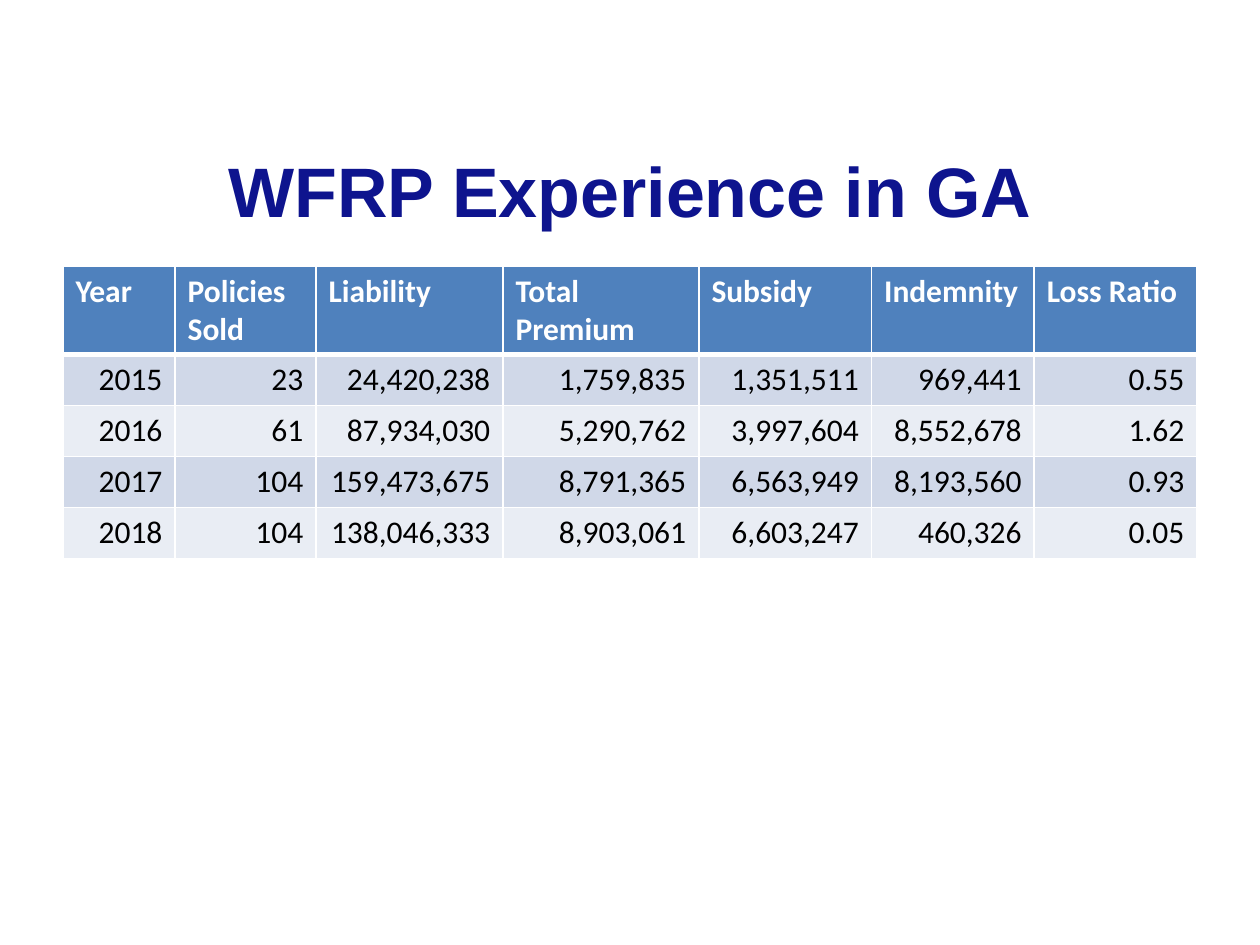
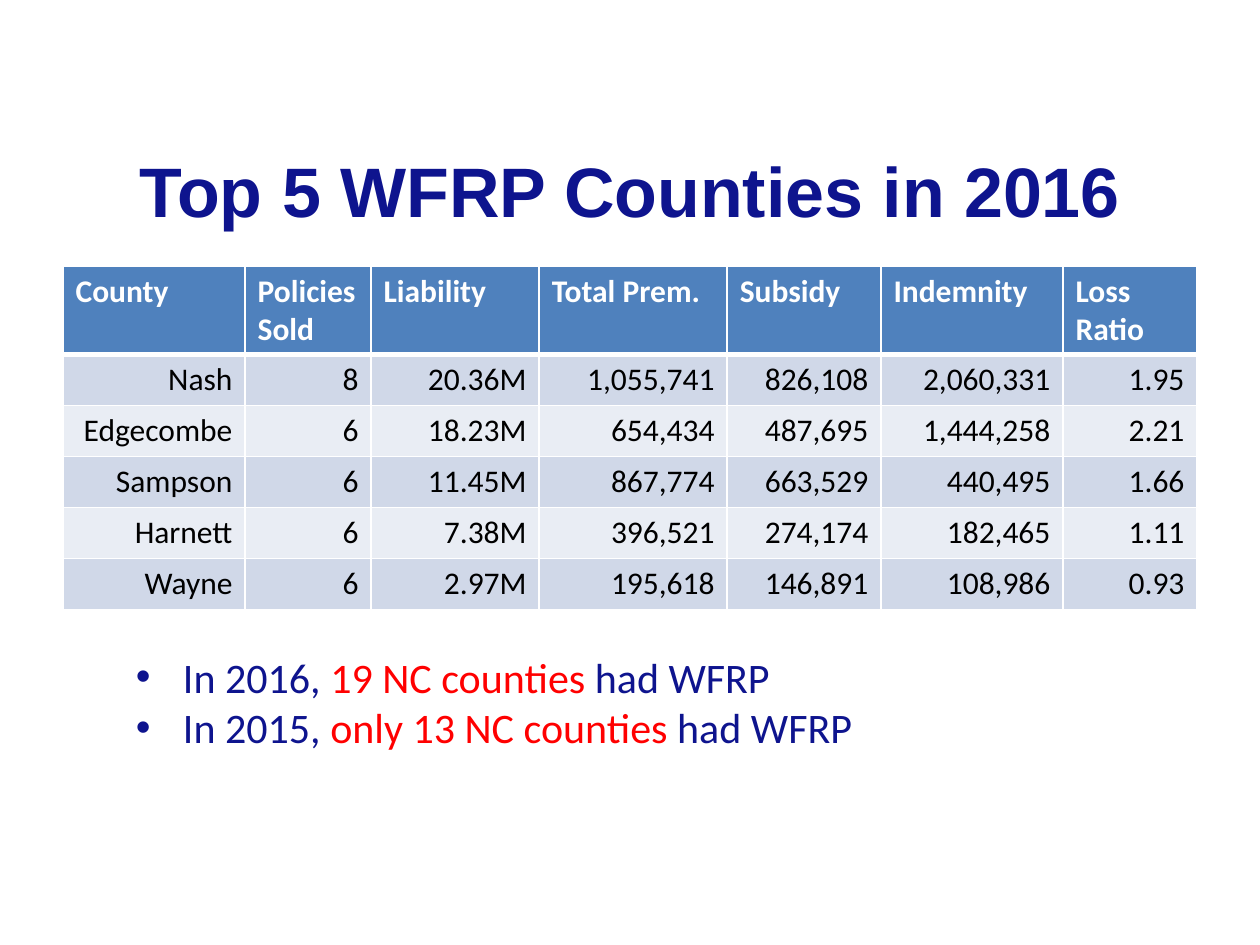
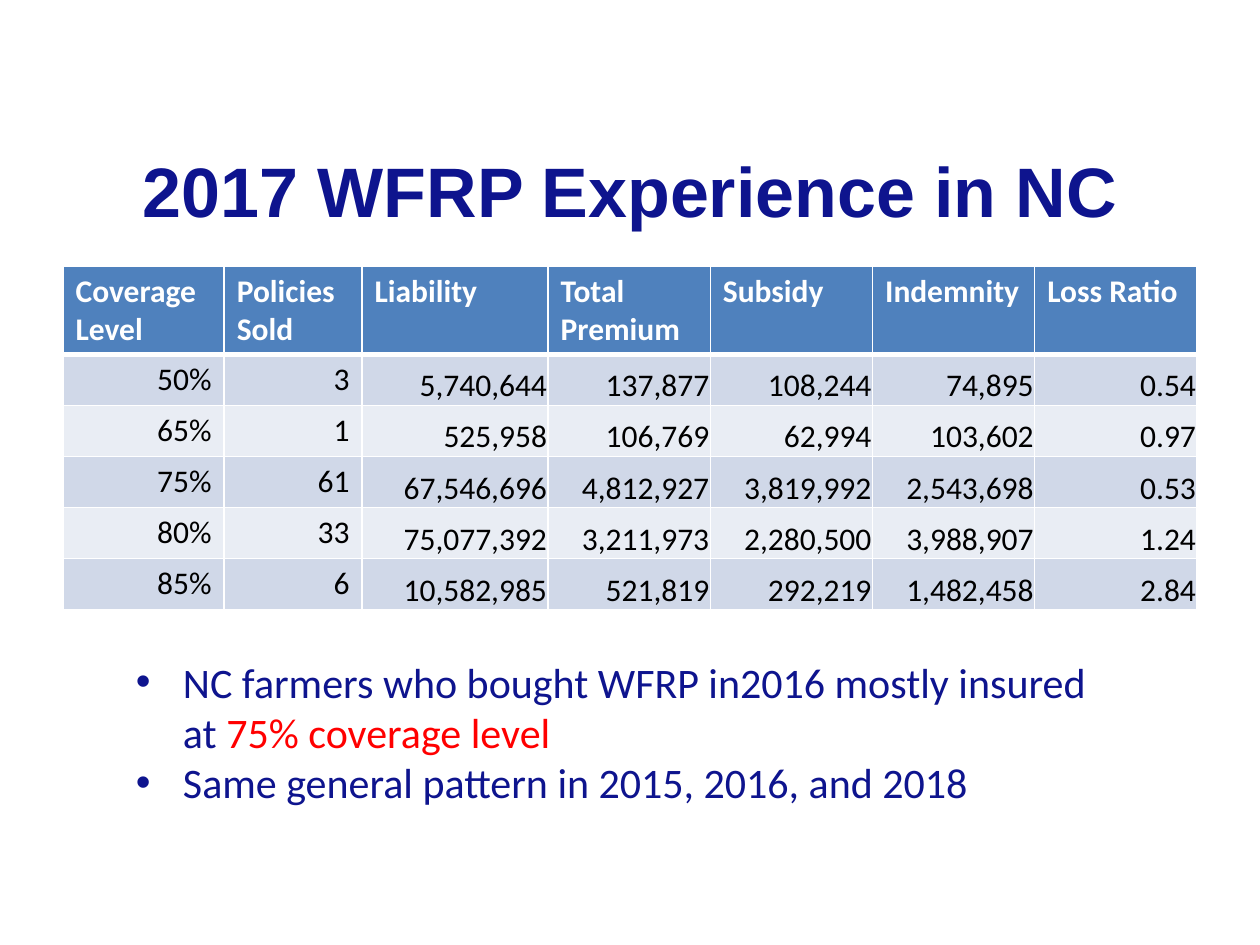
from lxml import etree
from pptx import Presentation
from pptx.dml.color import RGBColor
from pptx.enum.text import MSO_ANCHOR, PP_ALIGN
from pptx.oxml.ns import qn
from pptx.util import Cm, Pt

CENTER, LEFT, RIGHT = PP_ALIGN.CENTER, PP_ALIGN.LEFT, PP_ALIGN.RIGHT
MIDDLE, BOTTOM = MSO_ANCHOR.MIDDLE, MSO_ANCHOR.BOTTOM

NAVY, RED, WHITE, BLACK = "0E148E", "FF0000", "FFFFFF", "000000"
HEADER_FILL = "4F81BD"
BAND_FILLS = ("D0D8E8", "E9EDF4")

MARGIN, CONTENT_WIDTH = 1.27, 22.86
TITLE_TOP, TITLE_HEIGHT = 2.9, 1.85
TABLE_TOP, HEADER_HEIGHT, ROW_HEIGHT = 5.36, 1.78, 1.03
NOTES_LEFT, NOTES_WIDTH, NOTES_INDENT = 2.49, 20.45, 0.95
TIGHT_INSET = 0.02

SLIDES = [
    {
        "title": "WFRP Experience in GA",
        "widths": [2.26, 2.84, 3.77, 3.95, 3.48, 3.28, 3.28],
        "rows": [
            ("Year", "Policies Sold", "Liability", "Total Premium", "Subsidy", "Indemnity", "Loss Ratio"),
            ("2015", "23", "24,420,238", "1,759,835", "1,351,511", "969,441", "0.55"),
            ("2016", "61", "87,934,030", "5,290,762", "3,997,604", "8,552,678", "1.62"),
            ("2017", "104", "159,473,675", "8,791,365", "6,563,949", "8,193,560", "0.93"),
            ("2018", "104", "138,046,333", "8,903,061", "6,603,247", "460,326", "0.05"),
        ],
    },
    {
        "title": "Top 5 WFRP Counties in 2016",
        "widths": [3.67, 2.54, 3.39, 3.79, 3.1, 3.67, 2.7],
        "rows": [
            ("County", "Policies Sold", "Liability", "Total Prem.", "Subsidy", "Indemnity", "Loss Ratio"),
            ("Nash", "8", "20.36M", "1,055,741", "826,108", "2,060,331", "1.95"),
            ("Edgecombe", "6", "18.23M", "654,434", "487,695", "1,444,258", "2.21"),
            ("Sampson", "6", "11.45M", "867,774", "663,529", "440,495", "1.66"),
            ("Harnett", "6", "7.38M", "396,521", "274,174", "182,465", "1.11"),
            ("Wayne", "6", "2.97M", "195,618", "146,891", "108,986", "0.93"),
        ],
        "notes_top": 13.0,
        "notes_height": 2.31,
        "notes": [
            [("In 2016, ", NAVY), ("19 NC counties ", RED), ("had WFRP", NAVY)],
            [("In 2015, ", NAVY), ("only 13 NC counties ", RED), ("had WFRP", NAVY)],
        ],
    },
    {
        "title": "2017 WFRP Experience in NC",
        "widths": [3.25, 2.78, 3.75] + [3.27] * 4,
        "tight_from": 2,
        "rows": [
            ("Coverage Level", "Policies Sold", "Liability", "Total Premium", "Subsidy", "Indemnity", "Loss Ratio"),
            ("50%", "3", "5,740,644", "137,877", "108,244", "74,895", "0.54"),
            ("65%", "1", "525,958", "106,769", "62,994", "103,602", "0.97"),
            ("75%", "61", "67,546,696", "4,812,927", "3,819,992", "2,543,698", "0.53"),
            ("80%", "33", "75,077,392", "3,211,973", "2,280,500", "3,988,907", "1.24"),
            ("85%", "6", "10,582,985", "521,819", "292,219", "1,482,458", "2.84"),
        ],
        "notes_top": 13.1,
        "notes_height": 3.33,
        "notes": [
            [("NC farmers who bought WFRP in2016 mostly insured at ", NAVY), ("75% coverage level", RED)],
            [("Same general pattern in 2015, 2016, and 2018", NAVY)],
        ],
    },
]


def rgb(value):
    return RGBColor.from_string(value)


def set_font(p, name, size, color, bold=False):
    p.font.name = name
    p.font.size = Pt(size)
    p.font.bold = bold
    p.font.color.rgb = rgb(color)


def add_text_frame(s, left, top, width, height):
    tf = s.shapes.add_textbox(Cm(left), Cm(top), Cm(width), Cm(height)).text_frame
    tf.word_wrap = True
    return tf


def add_title(s, text):
    tf = add_text_frame(s, MARGIN, TITLE_TOP, CONTENT_WIDTH, TITLE_HEIGHT)
    tf.vertical_anchor = MIDDLE
    p = tf.paragraphs[0]
    p.text = text
    p.alignment = CENTER
    set_font(p, "Arial", 40, NAVY, True)


def set_borders(cell, top, bottom):
    tc_pr = cell._tc.get_or_add_tcPr()
    for side, width in (("L", 1), ("R", 1), ("T", top), ("B", bottom)):
        ln = etree.SubElement(tc_pr, qn(f"a:ln{side}"), w=str(Pt(width)))
        fill = etree.SubElement(ln, qn("a:solidFill"))
        etree.SubElement(fill, qn("a:srgbClr"), val=WHITE)


def fill_cell(cell, text, row, tight):
    header = row == 0
    set_borders(cell, 3 if row == 1 else 1, 3 if header else 1)
    cell.fill.solid()
    cell.fill.fore_color.rgb = rgb(HEADER_FILL if header else BAND_FILLS[(row - 1) % 2])
    p = cell.text_frame.paragraphs[0]
    p.text = text
    p.alignment = LEFT if header else RIGHT
    set_font(p, "Calibri", 18, WHITE if header else BLACK, header)
    if tight and not header:
        cell.vertical_anchor = BOTTOM
        cell.margin_left = cell.margin_right = cell.margin_top = Cm(TIGHT_INSET)
        cell.margin_bottom = 0


def add_data_table(s, rows, widths, tight_from):
    height = HEADER_HEIGHT + ROW_HEIGHT * (len(rows) - 1)
    table = s.shapes.add_table(len(rows), len(widths), Cm(MARGIN), Cm(TABLE_TOP),
                               Cm(CONTENT_WIDTH), Cm(height)).table
    for column, width in zip(table.columns, widths):
        column.width = Cm(width)
    for i, values in enumerate(rows):
        table.rows[i].height = Cm(ROW_HEIGHT if i else HEADER_HEIGHT)
        for j, text in enumerate(values):
            fill_cell(table.cell(i, j), text, i, j >= tight_from)


def add_bullet(p):
    p_pr = p._p.get_or_add_pPr()
    p_pr.set("marL", str(Cm(NOTES_INDENT)))
    p_pr.set("indent", str(-Cm(NOTES_INDENT)))
    etree.SubElement(p_pr, qn("a:buFont"), typeface="Arial")
    etree.SubElement(p_pr, qn("a:buChar"), char="•")


def add_notes(s, top, height, notes):
    tf = add_text_frame(s, NOTES_LEFT, top, NOTES_WIDTH, height)
    for i, parts in enumerate(notes):
        p = tf.add_paragraph() if i else tf.paragraphs[0]
        add_bullet(p)
        set_font(p, "Calibri", 24, NAVY)
        for text, color in parts:
            r = p.add_run()
            r.text = text
            r.font.color.rgb = rgb(color)


def main():
    prs = Presentation()
    prs.slide_width, prs.slide_height = Cm(25.4), Cm(19.05)
    for content in SLIDES:
        s = prs.slides.add_slide(prs.slide_layouts[6])
        add_title(s, content["title"])
        widths = content["widths"]
        add_data_table(s, content["rows"], widths, content.get("tight_from", len(widths)))
        if "notes" in content:
            add_notes(s, content["notes_top"], content["notes_height"], content["notes"])
    prs.save("out.pptx")


if __name__ == "__main__":
    main()
